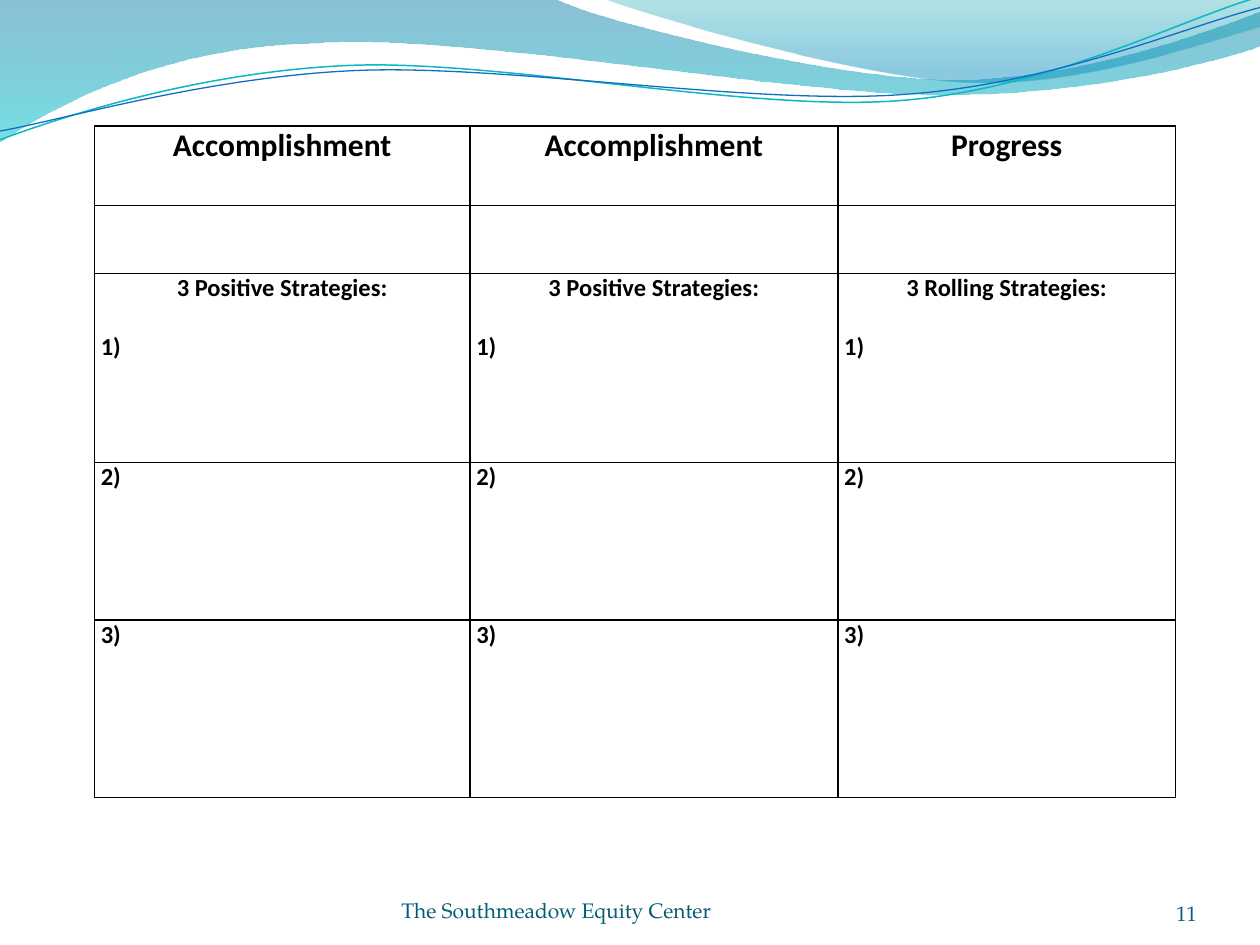
from dataclasses import dataclass

from lxml.etree import SubElement
from pptx import Presentation
from pptx.dml.color import RGBColor as RGB
from pptx.enum.text import MSO_ANCHOR as Anchor, PP_ALIGN as Align
from pptx.oxml.ns import qn
from pptx.util import Inches, Pt


@dataclass(frozen=True)
class Theme:
    """Colours, fonts and type sizes of the slide."""
    ink: str = "000000"
    footer: str = "045D75"
    teal_line: str = "0AB8BF"
    blue_line: str = "0F6FC6"
    wide_wave: tuple = ((0, "0074A1", 45), (1, "00C6CF", 55))
    right_wave: tuple = ((0, "00A1A9", 30), (0.8, "008BBF", 45))
    table_font: str = "Calibri"
    footer_font: str = "TeX Gyre Pagella"
    heading_size: int = 18
    strategy_size: int = 14
    footer_size: int = 12


THEME = Theme()

WIDE_WAVE = [(0, 0), (4.4, -0.01),
             (4.76, 0.17, 6.64, 0.63, 7.58, 0.63), (8.53, 0.63, 9.58, 0.26, 10, 0.09),
             (10.01, 0.36),
             (9.83, 0.44, 8.7, 0.76, 7.46, 0.75), (6.22, 0.75, 3.82, 0.28, 2.57, 0.34),
             (1.29, 0.36, 0.46, 0.83, -0.01, 1.13), (0, 0)]
RIGHT_WAVE = [(4.79, -0.01),
              (5.09, 0.11, 6.82, 0.62, 7.69, 0.65), (8.56, 0.69, 9.61, 0.32, 10, 0.21),
              (10, 0), (4.79, -0.01)]
TEAL_CURVE = [(0, 1.11),
              (0.48, 0.93, 1.58, 0.57, 2.77, 0.52), (3.95, 0.47, 5.93, 0.89, 7.13, 0.8),
              (8.33, 0.71, 9.38, 0.15, 9.98, -0.02)]
BLUE_CURVE = [(0, 1.04),
              (0.47, 0.96, 1.64, 0.61, 2.83, 0.56), (4.03, 0.51, 5.97, 0.84, 7.17, 0.75),
              (8.36, 0.67, 9.41, 0.21, 10, 0.06)]

HEADINGS = ["Accomplishment", "Accomplishment", "Progress"]
STRATEGIES = ["3 Positive Strategies:", "3 Positive Strategies:", "3 Rolling Strategies:"]
COLUMN_WIDTHS = [2.98, 2.92, 2.68]
ROW_HEIGHTS = [0.63, 0.54, 1.5, 1.25, 1.41]


def bend_segments(outline, segments):
    """Turn each triple of straight steps of a curved segment into one Bezier."""
    steps = iter(list(outline.element.iter(qn("a:lnTo"))))
    for segment in segments[1:]:
        first = next(steps)
        if len(segment) == 6:
            first.tag = qn("a:cubicBezTo")
            for step in (next(steps), next(steps)):
                first.append(step[0])
                step.getparent().remove(step)


def add_outline(slide, box, segments, close):
    """Draw a freeform of straight and curved segments, offset by the box."""
    left, top = box
    start, *rest = [(left + Inches(x), top + Inches(y)) for segment in segments
                    for x, y in zip(segment[::2], segment[1::2])]
    builder = slide.shapes.build_freeform(*start)
    builder.add_line_segments(rest, close=close)
    outline = builder.convert_to_shape()
    outline.shadow.inherit = False
    bend_segments(outline, segments)
    return outline


def add_wave(slide, box, segments, stops):
    """Draw a closed wave with a translucent vertical gradient."""
    wave = add_outline(slide, box, segments, True)
    wave.line.fill.background()
    wave.fill.gradient()
    wave.fill.gradient_angle = 270
    for stop, (position, color, opacity) in zip(wave.fill.gradient_stops, stops):
        stop.position = position
        stop.color.rgb = RGB.from_string(color)
        rgb = wave.element.findall(".//" + qn("a:srgbClr"))[-1]
        SubElement(rgb, qn("a:alpha"), val=str(opacity * 1000))


def add_curve(slide, box, segments, color, width):
    """Draw an open curved line."""
    curve = add_outline(slide, box, segments, False)
    curve.fill.background()
    curve.line.color.rgb = RGB.from_string(color)
    curve.line.width = Pt(width)


def add_header(slide, box):
    """Draw the waves and curved lines across the top."""
    add_wave(slide, box, WIDE_WAVE, THEME.wide_wave)
    add_wave(slide, box, RIGHT_WAVE, THEME.right_wave)
    add_curve(slide, box, TEAL_CURVE, THEME.teal_line, 0.85)
    add_curve(slide, box, BLUE_CURVE, THEME.blue_line, 0.75)


def style_paragraph(paragraph, font, size, color, align, bold=False):
    """Format a paragraph and its runs."""
    paragraph.alignment = align
    for run in paragraph.runs:
        run.font.name = font
        run.font.size = Pt(size)
        run.font.bold = bold
        run.font.color.rgb = RGB.from_string(color)


def add_footer_text(slide, box, text, align):
    """Place one bottom-anchored footer text."""
    frame = slide.shapes.add_textbox(*box).text_frame
    frame.word_wrap = True
    frame.vertical_anchor = Anchor.BOTTOM
    frame.margin_left = frame.margin_right = frame.margin_top = frame.margin_bottom = 0
    frame.text = text
    style_paragraph(frame.paragraphs[0], THEME.footer_font, THEME.footer_size,
                    THEME.footer, align)


def style_cell(cell):
    """Clear the fill, set the margins and rule all four sides."""
    cell.margin_left = cell.margin_right = Inches(0.05)
    cell.margin_top = cell.margin_bottom = 0
    properties = cell._tc.get_or_add_tcPr()
    for side in ("a:lnL", "a:lnR", "a:lnT", "a:lnB"):
        border = SubElement(properties, qn(side), w=str(Pt(1)))
        SubElement(SubElement(border, qn("a:solidFill")), qn("a:srgbClr"), val=THEME.ink)
    cell.fill.background()


def add_strategy_table(slide, box):
    """Place the table of headings and numbered strategies."""
    table = slide.shapes.add_table(len(ROW_HEIGHTS), len(COLUMN_WIDTHS), *box).table
    table.first_row = table.horz_banding = False
    for column, width in zip(table.columns, COLUMN_WIDTHS):
        column.width = Inches(width)
    for row, height in zip(table.rows, ROW_HEIGHTS):
        row.height = Inches(height)
    rows = [HEADINGS, [""] * 3, [f"{title}\n1)" for title in STRATEGIES],
            ["2)"] * 3, ["3)"] * 3]
    for row_index, texts in enumerate(rows):
        size = THEME.strategy_size if row_index else THEME.heading_size
        for column_index, text in enumerate(texts):
            cell = table.cell(row_index, column_index)
            style_cell(cell)
            if not text:
                continue
            cell.text_frame.text = text
            for paragraph in cell.text_frame.paragraphs:
                numbered = paragraph.text.endswith(")")
                style_paragraph(paragraph, THEME.table_font, size, THEME.ink,
                                Align.LEFT if numbered else Align.CENTER, bold=True)
            if "\n" in text:
                cell.text_frame.paragraphs[1].space_before = Pt(16.8)


def main():
    """Build and save the slide."""
    deck = Presentation()
    deck.slide_width, deck.slide_height = Inches(10), Inches(7.5)
    slide = deck.slides.add_slide(deck.slide_layouts[6])
    add_header(slide, (Inches(0), Inches(0)))
    add_footer_text(slide, (Inches(2.58), Inches(6.92), Inches(3.67), Inches(0.4)),
                    "The Southmeadow Equity Center", Align.CENTER)
    add_footer_text(slide, (Inches(8.67), Inches(6.95), Inches(0.83), Inches(0.4)),
                    "11", Align.RIGHT)
    add_strategy_table(slide, (Inches(0.75), Inches(1), Inches(8.58), Inches(5.33)))
    deck.save("out.pptx")


if __name__ == "__main__":
    main()
